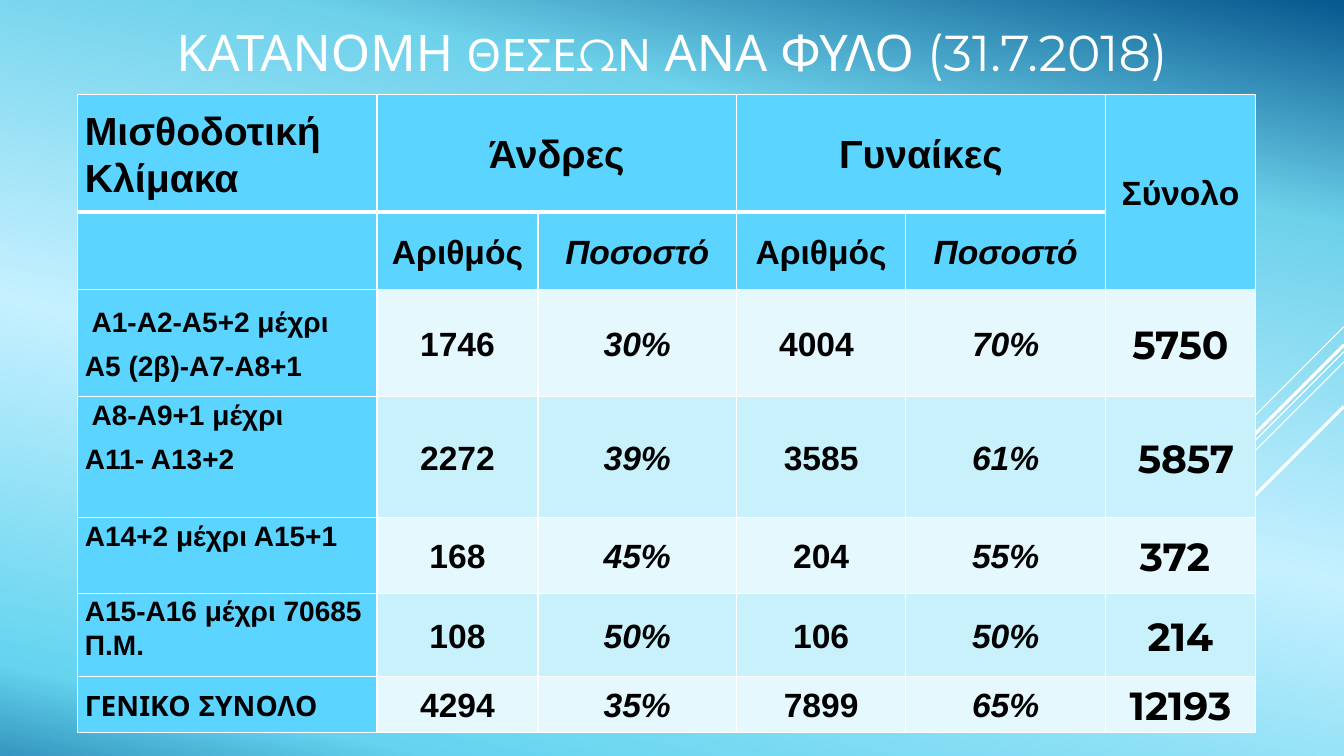
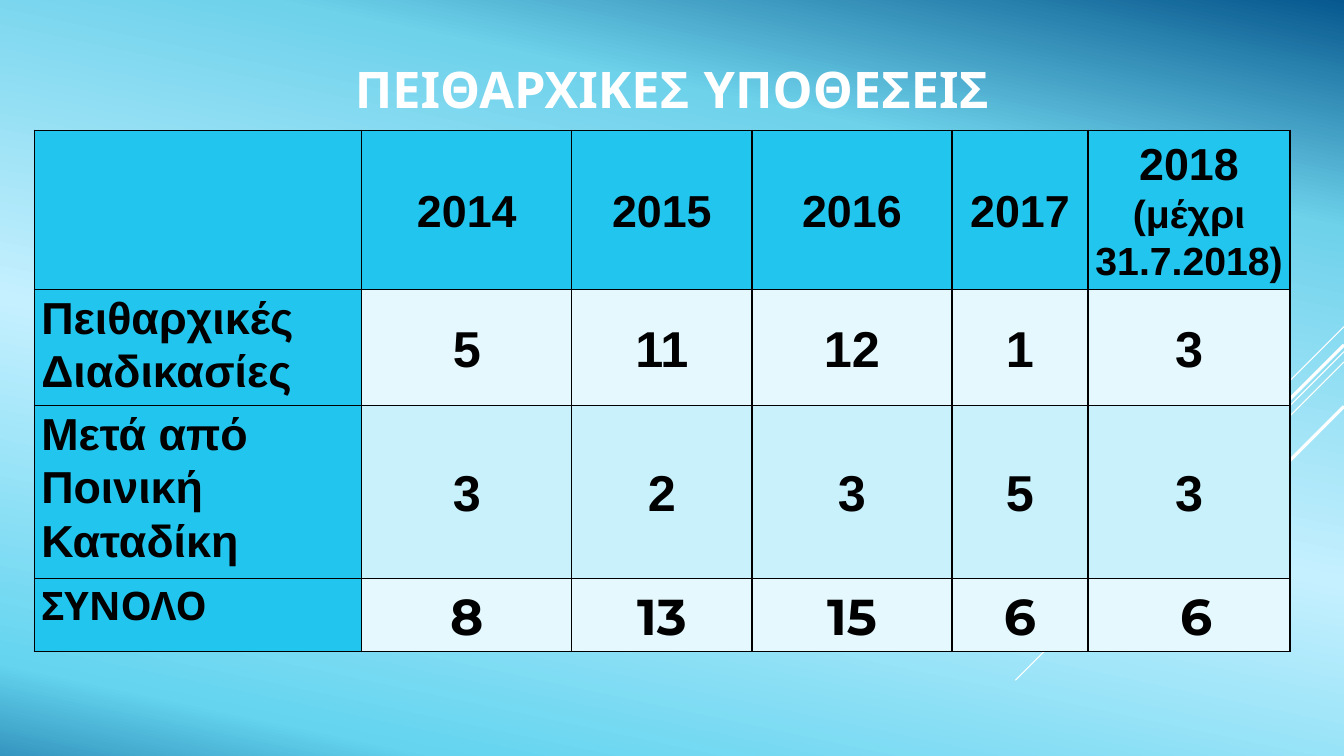
import lxml.etree
import pptx
import pptx.dml.color
import pptx.enum.shapes
import pptx.enum.text
import pptx.oxml
import pptx.oxml.ns
import pptx.util

Cm = pptx.util.Cm
Pt = pptx.util.Pt
ALIGN = pptx.enum.text.PP_ALIGN
ANCHOR = pptx.enum.text.MSO_ANCHOR

SLIDE_WIDTH, SLIDE_HEIGHT = 33.87, 19.05
WHITE, BLACK = "FFFFFF", "000000"
BODY_FONT, ACCENT_FONT = "Arial", "Montserrat"
BAND_FILLS = ["E4F8FD", "C8F1FB"]
BACKGROUND_STOPS = [(0, "06588E"), (22, "6ED2EB"), (56, "C5F0FF"), (91, "64D4EF"), (100, "3596BF")]
BACKGROUND_ANGLE = 102
DIAGONALS = [(8.23, 2.54, 0.75), (8.86, 8.28, 0.75), (9.12, 5.26, 0.75), (8.69, 4.85, 2.25), (10.24, 3.53, 2.25)]

POSITION_COLUMNS = [7.54, 4.06, 5, 4.27, 5.03, 3.78]
POSITION_ROWS = [2.95, 1.96, 2.7, 3.05, 1.9, 2.1, 1.41]
POSITION_FILL = "5BD4FF"
POSITIONS = [
    (" Α1-Α2-Α5+2 μέχρι\nΑ5 (2β)-Α7-Α8+1", "1746", "30%", "4004 ", "70%", "5750"),
    (" Α8-Α9+1 μέχρι\nΑ11- Α13+2", "2272", "39%", "3585", "61%", " 5857"),
    ("Α14+2 μέχρι Α15+1", "168", "45%", "204", "55%", "372 "),
    ("Α15-Α16 μέχρι 70685 Π.Μ.", "108", "50%", "106", "50%", "214"),
    ("ΓΕΝΙΚΟ ΣΥΝΟΛΟ", "4294", "35%", "7899", "65%", "12193"),
]

CASE_COLUMNS = [8.26, 5.29, 4.54, 5.04, 3.43, 5.09]
CASE_ROWS = [4.01, 2.74, 4.08, 1.84]
CASE_FILL = "22C5ED"
YEARS = ["2014", "2015", "2016", "2017"]
CASES = [
    ("Πειθαρχικές Διαδικασίες", "5", "11", "12", "1", "3"),
    ("Μετά από Ποινική Καταδίκη", "3", "2", "3", "5", "3"),
    ("ΣΥΝΟΛΟ", "8", "13", "15", "6", " 6"),
]


def rgb(value):
    """Turn a hex string into a colour."""
    return pptx.dml.color.RGBColor.from_string(value)


def add_text(paragraph, text, size=24, font=BODY_FONT, color=BLACK, bold=True, italic=False):
    """Append a formatted run to a paragraph."""
    run = paragraph.add_run()
    run.text = text
    run.font.size = Pt(size)
    run.font.name = font
    run.font.bold = bold
    run.font.italic = italic
    run.font.color.rgb = rgb(color)


def set_background(slide):
    """Fill the slide background with the shared gradient."""
    fill = slide.background.fill
    fill.gradient()
    fill.gradient_angle = 360 - BACKGROUND_ANGLE
    stop_list = slide.background.fill._fill._gradFill.find(pptx.oxml.ns.qn("a:gsLst"))
    for stop in list(stop_list):
        stop_list.remove(stop)
    for position, color in BACKGROUND_STOPS:
        stop = lxml.etree.SubElement(stop_list, pptx.oxml.ns.qn("a:gs"), pos=str(position * 1000))
        lxml.etree.SubElement(stop, pptx.oxml.ns.qn("a:srgbClr"), val=color)


def add_diagonal(slide, top, length, width):
    """Draw a 45 degree white line that starts at the right edge."""
    line = slide.shapes.add_connector(
        pptx.enum.shapes.MSO_CONNECTOR.STRAIGHT,
        Cm(SLIDE_WIDTH), Cm(top), Cm(SLIDE_WIDTH - length), Cm(top + length))
    line.line.color.rgb = rgb(WHITE)
    line.line.width = Pt(width)
    lxml.etree.SubElement(line._element.spPr, pptx.oxml.ns.qn("a:effectLst"))


def add_slide(presentation):
    """Add a blank slide with the shared backdrop."""
    slide = presentation.slides.add_slide(presentation.slide_layouts[6])
    set_background(slide)
    for diagonal in DIAGONALS:
        add_diagonal(slide, *diagonal)
    return slide


def add_title(slide, parts, top, height, bold=False):
    """Add a centred title made of (text, size) parts."""
    shape = slide.shapes.add_textbox(0, Cm(top), Cm(SLIDE_WIDTH), Cm(height))
    frame = shape.text_frame
    frame.word_wrap = True
    frame.vertical_anchor = ANCHOR.MIDDLE
    paragraph = frame.paragraphs[0]
    paragraph.alignment = ALIGN.CENTER
    for text, size in parts:
        add_text(paragraph, text, size=size, font=ACCENT_FONT, color=WHITE, bold=bold)


def add_table(slide, left, top, columns, rows):
    """Add a plain table with the given column widths and row heights."""
    frame = slide.shapes.add_table(
        len(rows), len(columns), Cm(left), Cm(top), Cm(sum(columns)), Cm(sum(rows)))
    table = frame.table
    table.first_row = table.horz_banding = False
    for column, width in zip(table.columns, columns):
        column.width = Cm(width)
    for row, height in zip(table.rows, rows):
        row.height = Cm(height)
    return table


def set_borders(cell, color, top=1, bottom=1):
    """Give a cell solid borders on all four sides."""
    properties = cell._tc.get_or_add_tcPr()
    for index, (side, width) in enumerate([("L", 1), ("R", 1), ("T", top), ("B", bottom)]):
        border = pptx.oxml.parse_xml(
            f'<a:ln{side} {pptx.oxml.ns.nsdecls("a")} w="{Pt(width)}">'
            f'<a:solidFill><a:srgbClr val="{color}"/></a:solidFill></a:ln{side}>')
        properties.insert(index, border)


def style_cells(table, header_rows, header_fill, border, heavy_columns=0):
    """Set fills and borders, with a heavy rule under the first row where asked."""
    for row_index, row in enumerate(table.rows):
        for column_index, cell in enumerate(row.cells):
            is_header = row_index < header_rows or column_index == 0
            cell.fill.solid()
            cell.fill.fore_color.rgb = rgb(
                header_fill if is_header else BAND_FILLS[(row_index - header_rows) % 2])
            heavy = column_index < heavy_columns
            set_borders(cell, border,
                        top=3 if heavy and row_index == 1 else 1,
                        bottom=3 if heavy and row_index == 0 else 1)


def write_cell(cell, text, align=ALIGN.CENTER, anchor=ANCHOR.MIDDLE, side=0.18, **text_format):
    """Write one paragraph per line of text into a cell."""
    cell.vertical_anchor = anchor
    cell.margin_left = cell.margin_right = Cm(side)
    cell.margin_top, cell.margin_bottom = Cm(0.02), 0
    frame = cell.text_frame
    for index, line in enumerate(text.split("\n")):
        paragraph = frame.add_paragraph() if index else frame.paragraphs[0]
        paragraph.alignment = align
        paragraph.line_spacing = 1.07
        paragraph.space_after = Pt(8)
        add_text(paragraph, line, **text_format)


def build_positions(presentation):
    """Build the slide on positions by gender."""
    slide = add_slide(presentation)
    add_title(slide, [("ΚΑΤΑΝΟΜΗ ", 36), ("ΘΕΣΕΩΝ", 32), (" ΑΝΑ ΦΥΛΟ (31.7.2018)", 36)], -0.36, 3.33)
    table = add_table(slide, 1.96, 2.39, POSITION_COLUMNS, POSITION_ROWS)
    style_cells(table, 2, POSITION_FILL, WHITE, heavy_columns=5)
    write_cell(table.cell(0, 0), "Μισθοδοτική Κλίμακα", align=ALIGN.LEFT, size=28)
    for column, heading in [(1, "Άνδρες"), (3, "Γυναίκες")]:
        table.cell(0, column).merge(table.cell(0, column + 1))
        write_cell(table.cell(0, column), heading, size=28)
        write_cell(table.cell(1, column), "Αριθμός")
        write_cell(table.cell(1, column + 1), "Ποσοστό", italic=True)
    table.cell(0, 5).merge(table.cell(1, 5))
    write_cell(table.cell(0, 5), "Σύνολο")
    for row, (label, *counts, total) in enumerate(POSITIONS, start=2):
        is_last = row == len(POSITIONS) + 1
        write_cell(table.cell(row, 0), label, align=ALIGN.LEFT, size=20,
                   anchor=ANCHOR.MIDDLE if row == 2 or is_last else ANCHOR.TOP,
                   font=ACCENT_FONT if is_last else BODY_FONT)
        for column, count in enumerate(counts, start=1):
            write_cell(table.cell(row, column), count, italic=column % 2 == 0)
        write_cell(table.cell(row, 5), total, size=28, font=ACCENT_FONT)


def build_cases(presentation):
    """Build the slide on disciplinary cases by year."""
    slide = add_slide(presentation)
    add_title(slide, [("ΠΕΙΘΑΡΧΙΚΕΣ ΥΠΟΘΕΣΕΙΣ", 36)], 1.22, 2.03, bold=True)
    table = add_table(slide, 0.86, 3.28, CASE_COLUMNS, CASE_ROWS)
    style_cells(table, 1, CASE_FILL, BLACK)
    for column, year in enumerate(YEARS, start=1):
        write_cell(table.cell(0, column), year, size=32)
    last_year = table.cell(0, 5)
    write_cell(last_year, "2018 ", side=0, size=32)
    add_text(last_year.text_frame.paragraphs[0], "(μέχρι 31.7.2018)", size=28)
    for row, (label, *counts) in enumerate(CASES, start=1):
        is_total = row == len(CASES)
        font = ACCENT_FONT if is_total else BODY_FONT
        write_cell(table.cell(row, 0), label, align=ALIGN.LEFT, anchor=ANCHOR.TOP,
                   size=28 if is_total else 32, font=font)
        for column, count in enumerate(counts, start=1):
            write_cell(table.cell(row, column), count, size=36, font=font,
                       side=0 if column == 5 else 0.18)


def main():
    """Build and save the presentation."""
    presentation = pptx.Presentation()
    presentation.slide_width = Cm(SLIDE_WIDTH)
    presentation.slide_height = Cm(SLIDE_HEIGHT)
    build_positions(presentation)
    build_cases(presentation)
    presentation.save("out.pptx")


if __name__ == "__main__":
    main()
